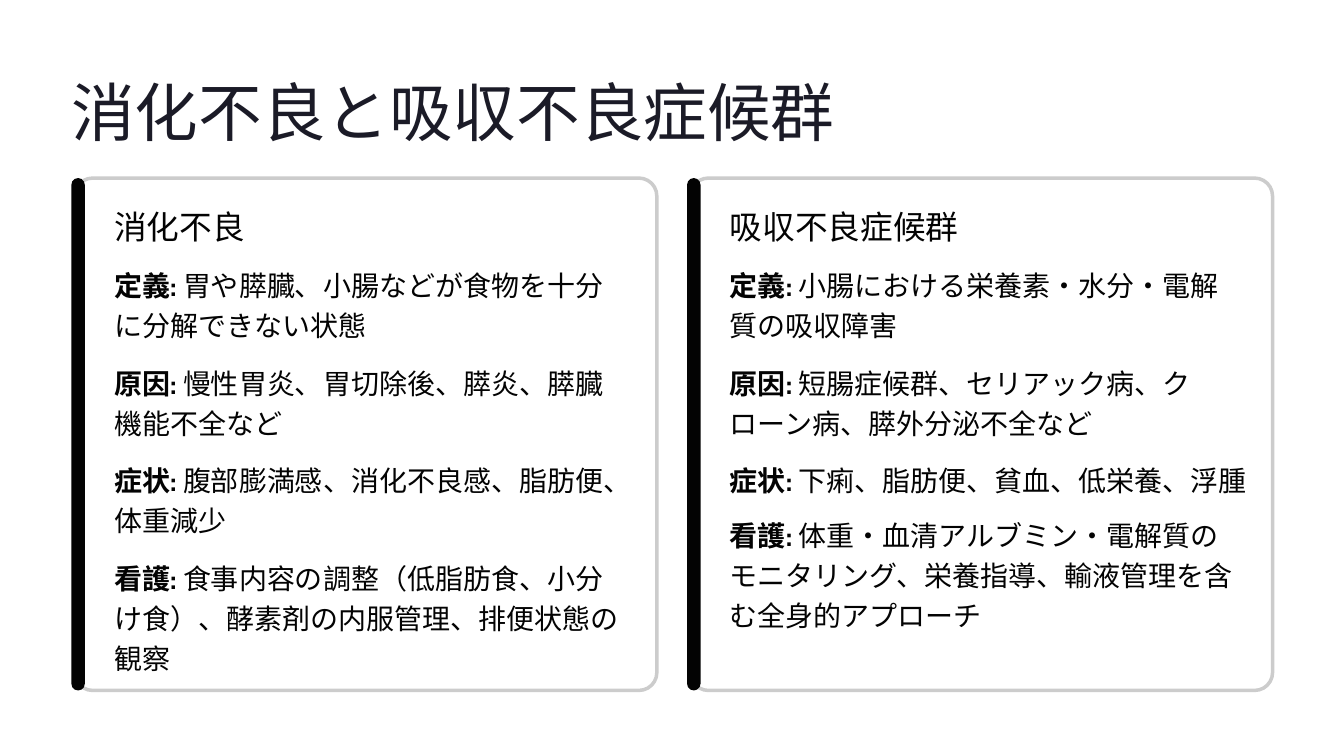
from lxml import etree
from pptx import Presentation
from pptx.dml.color import RGBColor
from pptx.enum.shapes import MSO_SHAPE
from pptx.enum.text import MSO_ANCHOR, MSO_AUTO_SIZE, PP_ALIGN
from pptx.oxml.ns import qn
from pptx.util import Inches, Pt

ROUNDED = MSO_SHAPE.ROUNDED_RECTANGLE
TOP = MSO_ANCHOR.TOP
LEFT = PP_ALIGN.LEFT
NO_AUTOFIT = MSO_AUTO_SIZE.NONE

WHITE = RGBColor(0xFF, 0xFF, 0xFF)
BORDER = RGBColor(0xCC, 0xCC, 0xCC)
INK = RGBColor(0x03, 0x03, 0x03)
TITLE_INK = RGBColor(0x1B, 0x1B, 0x27)
HEADING_FONT = "Inter"
BODY_FONT = "Cabin"

SLIDE_WIDTH, SLIDE_HEIGHT = 16, 9
TITLE_ONLY_LAYOUT = 5
MARGIN = 0.85
CARD_TOP, CARD_HEIGHT = 2.12, 6.1
CARD_GAP = 0.36
CARD_WIDTH = (SLIDE_WIDTH - 2 * MARGIN - CARD_GAP) / 2
ACCENT_WIDTH = 0.16
PANEL_INSET = 0.04
TEXT_INSET = 0.51
ENTRY_WIDTH = 6.09
ENTRY_LINE, ENTRY_GAP = 0.51, 0.14

TITLE = "消化不良と吸収不良症候群"
CARDS = [
    ("消化不良", [
        ("定義:", "胃や膵臓、小腸などが食物を十分に分解できない状態", 2),
        ("原因:", "慢性胃炎、胃切除後、膵炎、膵臓機能不全など", 2),
        ("症状:", "腹部膨満感、消化不良感、脂肪便、体重減少", 2),
        ("看護:", "食事内容の調整（低脂肪食、小分け食）、酵素剤の内服管理、排便状態の観察", 3),
    ]),
    ("吸収不良症候群", [
        ("定義:", "小腸における栄養素・水分・電解質の吸収障害", 2),
        ("原因:", "短腸症候群、セリアック病、クローン病、膵外分泌不全など", 2),
        ("症状:", "下痢、脂肪便、貧血、低栄養、浮腫", 1),
        ("看護:", "体重・血清アルブミン・電解質のモニタリング、栄養指導、輸液管理を含む全身的アプローチ", 3),
    ]),
]


def to_inches(box):
    return [Inches(length) for length in box]


def write_text(shape, runs, font=BODY_FONT, size=24, color=INK, spacing=34.5, wrap=True):
    frame = shape.text_frame
    frame.margin_left = frame.margin_right = frame.margin_top = frame.margin_bottom = 0
    frame.auto_size = NO_AUTOFIT
    frame.vertical_anchor = TOP
    frame.word_wrap = wrap
    paragraph = frame.paragraphs[0]
    paragraph.alignment = LEFT
    paragraph.line_spacing = Pt(spacing)
    for text, bold in runs:
        run = paragraph.add_run()
        run.text = text
        run.font.name = font
        run.font.size = Pt(size)
        run.font.bold = bold
        run.font.color.rgb = color


def add_rounded_panel(slide, box, radius, fill, line=None, opacity=100):
    shape = slide.shapes.add_shape(ROUNDED, *to_inches(box))
    shape.adjustments[0] = radius
    shape.shadow.inherit = False
    shape.fill.solid()
    shape.fill.fore_color.rgb = fill
    if opacity < 100:
        color = shape.fill._xPr.find(qn("a:solidFill"))[0]
        etree.SubElement(color, qn("a:alpha")).set("val", str(opacity * 1000))
    if line is None:
        shape.line.fill.background()
    else:
        shape.line.color.rgb = line
        shape.line.width = Pt(3)


def add_title(slide, box):
    title = slide.shapes.title
    title.left, title.top, title.width, title.height = to_inches(box)
    write_text(title, [(TITLE, False)], font=HEADING_FONT, size=54.5,
               color=TITLE_INK, spacing=68, wrap=False)


def add_card(slide, box, heading, entries):
    left, top, width, height = box
    panel = (left + PANEL_INSET, top, width - PANEL_INSET, height)
    add_rounded_panel(slide, panel, 0.035, WHITE, line=BORDER, opacity=95)
    add_rounded_panel(slide, (left, top, ACCENT_WIDTH, height), 0.5, INK)

    text_left = left + TEXT_INSET
    heading_box = (text_left, top + 0.34, 3.74, 0.5)
    write_text(slide.shapes.add_textbox(*to_inches(heading_box)), [(heading, False)],
               font=HEADING_FONT, size=28, spacing=34, wrap=False)

    entry_top = top + 1
    for label, text, lines in entries:
        entry_height = lines * ENTRY_LINE
        entry_box = (text_left, entry_top, ENTRY_WIDTH, entry_height)
        write_text(slide.shapes.add_textbox(*to_inches(entry_box)),
                   [(label, True), (" " + text, False)], wrap=lines > 1)
        entry_top += entry_height + ENTRY_GAP


def main():
    presentation = Presentation()
    presentation.slide_width = Inches(SLIDE_WIDTH)
    presentation.slide_height = Inches(SLIDE_HEIGHT)
    slide = presentation.slides.add_slide(presentation.slide_layouts[TITLE_ONLY_LAYOUT])
    slide.background.fill.solid()
    slide.background.fill.fore_color.rgb = WHITE

    add_title(slide, (MARGIN, 0.83, 9.1, 0.95))
    for column, (heading, entries) in enumerate(CARDS):
        card_left = MARGIN + column * (CARD_WIDTH + CARD_GAP)
        add_card(slide, (card_left, CARD_TOP, CARD_WIDTH, CARD_HEIGHT), heading, entries)

    presentation.save("out.pptx")


if __name__ == "__main__":
    main()
